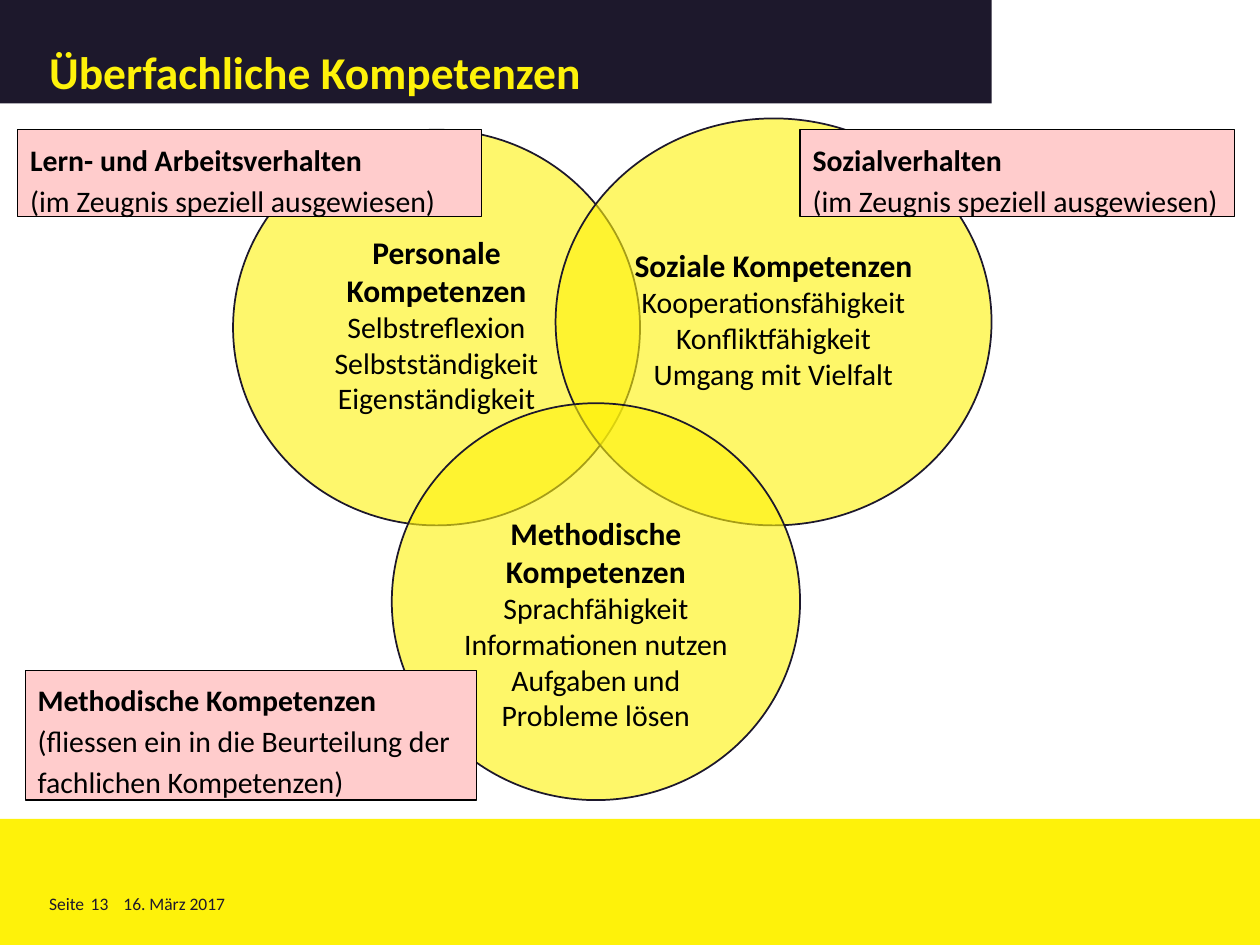
import pptx
import pptx.util
import pptx.dml.color
import pptx.enum.shapes
import pptx.enum.text
import pptx.oxml
import pptx.oxml.ns
from lxml import etree

COLORS = {"yellow": "FEF20A", "pale": "FEF76C", "navy": "1D182C",
          "pink": "FFCCCC", "black": "000000"}
Inches = pptx.util.Inches
Shapes = pptx.enum.shapes.MSO_SHAPE
Anchor = pptx.enum.text.MSO_ANCHOR
Align = pptx.enum.text.PP_ALIGN


def rgb(name):
    return pptx.dml.color.RGBColor.from_string(COLORS[name])


def write(para, text, size=17, bold=False, color="black"):
    span = para.add_run()
    span.text = text
    span.font.name = "Calibri"
    span.font.size = pptx.util.Pt(size)
    span.font.bold = bold
    span.font.color.rgb = rgb(color)


def set_frame(shape, insets, anchor=Anchor.TOP):
    frame = shape.text_frame
    frame.word_wrap = True
    frame.auto_size = pptx.enum.text.MSO_AUTO_SIZE.NONE
    frame.vertical_anchor = anchor
    (frame.margin_left, frame.margin_top,
     frame.margin_right, frame.margin_bottom) = map(Inches, insets)
    return frame


def add_panel(page, kind, place, fill, line=None, width=1, opacity=100):
    shape = page.shapes.add_shape(kind, *map(Inches, place))
    shape.shadow.inherit = False
    shape.fill.solid()
    shape.fill.fore_color.rgb = rgb(fill)
    if opacity < 100:
        tint = shape.fill._xPr.find(".//" + pptx.oxml.ns.qn("a:srgbClr"))
        alpha = etree.SubElement(tint, pptx.oxml.ns.qn("a:alpha"))
        alpha.set("val", str(opacity * 1000))
    if line:
        shape.line.color.rgb = rgb(line)
        shape.line.width = pptx.util.Pt(width)
    else:
        shape.line.fill.background()
    return shape


def add_title(page, text):
    title = page.shapes.title
    title.left, title.top, title.width, title.height = map(Inches, (0, 0, 7.87, 0.82))
    title.fill.solid()
    title.fill.fore_color.rgb = rgb("navy")
    frame = set_frame(title, (0.39, 0.08, 0.08, 0.04), Anchor.BOTTOM)
    para = frame.paragraphs[0]
    para.alignment = Align.LEFT
    para.line_spacing = 0.8
    write(para, text, size=26, bold=True, color="yellow")


def add_footer_text(page, left, width, text):
    box = page.shapes.add_textbox(*map(Inches, (left, 7.09, width, 0.17)))
    frame = set_frame(box, (0, 0, 0, 0))
    write(frame.paragraphs[0], text, size=10, color="navy")


def add_circle(page, place, headings, skills, fill="yellow", opacity=61,
               insets=(0.1, 0, 0.1, 0.05)):
    circle = add_panel(page, Shapes.OVAL, place, fill, "navy", opacity=opacity)
    frame = set_frame(circle, insets, Anchor.MIDDLE)
    for index, text in enumerate(headings + skills):
        para = frame.add_paragraph() if index else frame.paragraphs[0]
        para.alignment = Align.CENTER
        is_heading = index < len(headings)
        write(para, text, size=18 if is_heading else 17, bold=is_heading)


def add_note(page, place, heading, remark):
    note = add_panel(page, Shapes.RECTANGLE, place, "pink", "black", 0.75)
    para = set_frame(note, (0.1, 0.05, 0.12, 0.05)).paragraphs[0]
    para.alignment = Align.LEFT
    para.line_spacing = 1.15
    para.space_after = pptx.util.Pt(10)
    write(para, heading, bold=True)
    para.add_line_break()
    write(para, remark)


def main():
    deck = pptx.Presentation()
    deck.slide_width, deck.slide_height = Inches(10), Inches(7.5)
    page = deck.slides.add_slide(deck.slide_layouts[5])

    add_panel(page, Shapes.RECTANGLE, (0, 6.5, 10, 1), "yellow")
    add_title(page, "Überfachliche Kompetenzen")
    add_footer_text(page, 0.39, 0.32, "Seite")
    add_footer_text(page, 0.72, 0.25, "13")
    add_footer_text(page, 0.98, 2.28, "16. März 2017")

    add_circle(page, (1.85, 1.03, 3.23, 3.14), ["Personale Kompetenzen"],
               ["Selbstreflexion", "Selbstständigkeit", "Eigenständigkeit"],
               fill="pale", opacity=100)
    add_circle(page, (4.41, 0.94, 3.46, 3.23), ["Soziale Kompetenzen"],
               ["Kooperationsfähigkeit", "Konfliktfähigkeit", "Umgang mit Vielfalt"])
    add_circle(page, (3.11, 3.2, 3.24, 3.15), ["Methodische", "Kompetenzen"],
               ["Sprachfähigkeit", "Informationen nutzen", "Aufgaben und Probleme lösen"],
               insets=(0.1, 0.35, 0.1, 0))

    report = "(im Zeugnis speziell ausgewiesen)"
    add_note(page, (0.14, 1.03, 3.68, 0.69), "Lern- und Arbeitsverhalten", report)
    add_note(page, (6.35, 1.03, 3.45, 0.69), "Sozialverhalten", report)
    add_note(page, (0.2, 5.32, 3.58, 1.03), "Methodische Kompetenzen",
             "(fliessen ein in die Beurteilung der fachlichen Kompetenzen)")
    deck.save("out.pptx")


if __name__ == "__main__":
    main()
